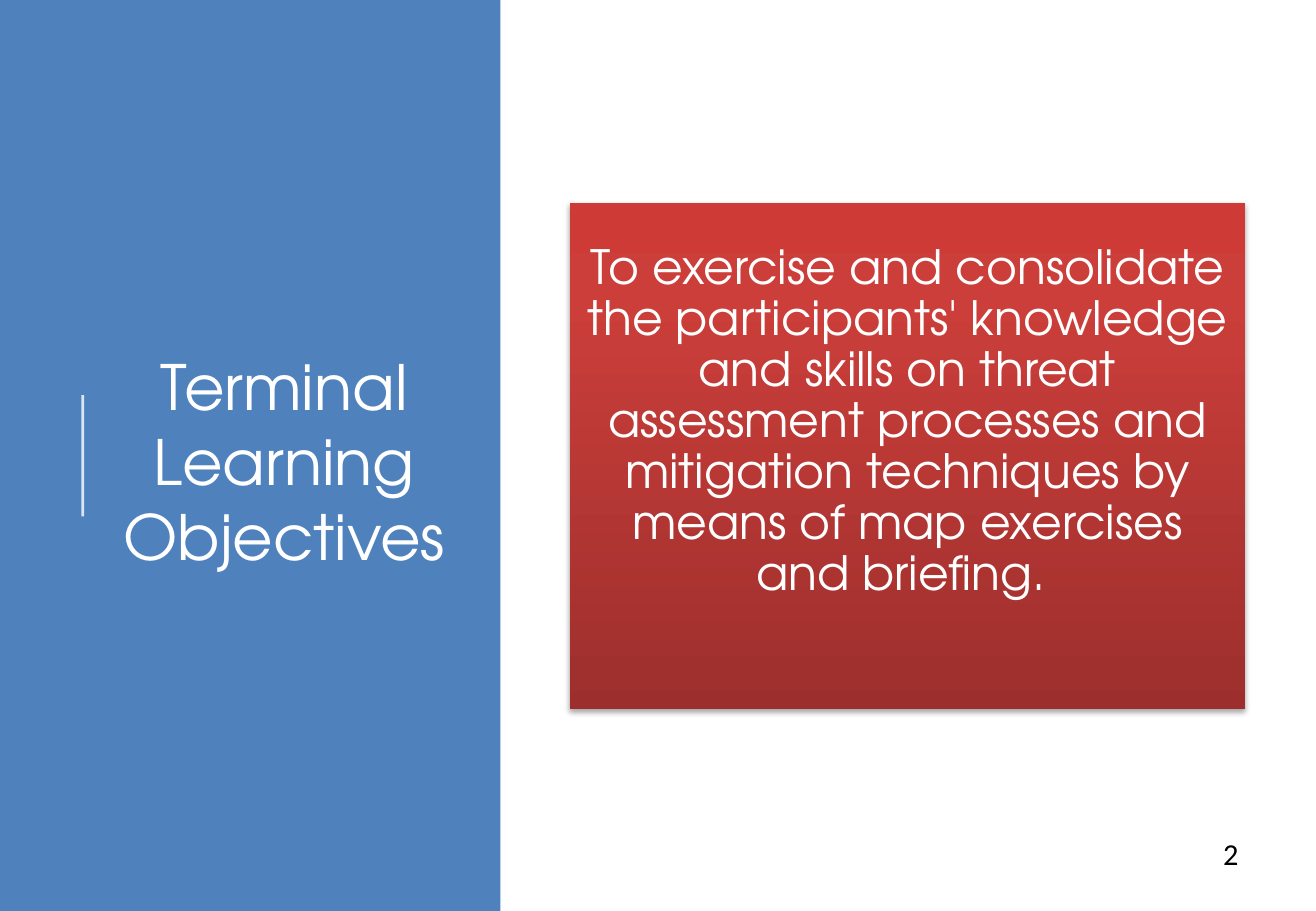
from copy import deepcopy
from dataclasses import dataclass

from lxml import etree
from pptx import Presentation
from pptx import util as u
from pptx.dml.color import RGBColor
from pptx.enum import shapes, text
from pptx.oxml.ns import qn

COLORS = {
    "blue": "4F81BD",
    "white": "FFFFFF",
    "black": "000000",
    "dark_red": "9C2F2D",
    "red": "CB3E3A",
    "light_red": "CE3B37",
}
HEADING_FONT = "TeX Gyre Adventor"
OBJECTIVE = (
    "To exercise and consolidate the participants' knowledge and skills on threat "
    "assessment processes and mitigation techniques by means of map exercises and briefing. "
)


@dataclass(frozen=True)
class Area:
    left: float
    top: float
    width: float
    height: float

    def lengths(self) -> tuple:
        return tuple(u.Cm(v) for v in (self.left, self.top, self.width, self.height))


SIDEBAR = Area(0, 0, 10.46, 19.05)
HEADING = Area(2.13, 1.98, 7.62, 15.29)
OBJECTIVE_CARD = Area(11.91, 4.24, 14.12, 10.59)
PAGE_NUMBER = Area(19.71, 17.35, 6.43, 1.02)


def rgb(name: str) -> RGBColor:
    return RGBColor.from_string(COLORS[name])


def add_rectangle(slide, area: Area):
    rectangle = slide.shapes.add_shape(shapes.MSO_SHAPE.RECTANGLE, *area.lengths())
    rectangle.shadow.inherit = False
    rectangle.line.fill.background()
    return rectangle


def write(frame, words: str, *, size: float, font: str = HEADING_FONT, color: str = "white",
          align=text.PP_ALIGN.CENTER, anchor=text.MSO_ANCHOR.MIDDLE, spacing: float = 1.0) -> None:
    frame.word_wrap = True
    frame.auto_size = text.MSO_AUTO_SIZE.NONE
    frame.vertical_anchor = anchor
    paragraph = frame.paragraphs[0]
    paragraph.alignment = align
    paragraph.line_spacing = spacing
    run = paragraph.add_run()
    run.text = words
    run.font.size = u.Pt(size)
    run.font.name = font
    run.font.color.rgb = rgb(color)


def set_alpha(color_element, percent: int) -> None:
    etree.SubElement(color_element, qn("a:alpha"), val=str(percent * 1000))


def fill_red_gradient(card) -> None:
    card.fill.gradient()
    card.fill.gradient_angle = 90
    stop_list = card.element.find(".//" + qn("a:gsLst"))
    stop_list.append(deepcopy(stop_list[0]))
    levels = ((0, "dark_red"), (0.8, "red"), (1, "light_red"))
    for stop, (position, color) in zip(card.fill.gradient_stops, levels):
        stop.position = position
        stop.color.rgb = rgb(color)


def add_soft_shadow(card) -> None:
    effects = card.element.spPr.find(qn("a:effectLst"))
    shadow = etree.SubElement(
        effects, qn("a:outerShdw"), blurRad=str(u.Pt(3.1)), dist=str(u.Pt(1.8)),
        dir="5400000", rotWithShape="0",
    )
    set_alpha(etree.SubElement(shadow, qn("a:srgbClr"), val=COLORS["black"]), 35)


def add_accent(slide):
    accent = slide.shapes.add_connector(
        shapes.MSO_CONNECTOR.STRAIGHT, u.Cm(1.73), u.Cm(10.8), u.Cm(1.73), u.Cm(8.26)
    )
    accent.line.width = u.Pt(1.5)
    accent.line.color.rgb = rgb("white")
    set_alpha(accent.element.find(".//" + qn("a:srgbClr")), 80)
    etree.SubElement(accent.element.spPr, qn("a:effectLst"))
    return accent


def main() -> None:
    deck = Presentation()
    deck.slide_width, deck.slide_height = u.Cm(27.51), u.Cm(19.05)
    slide = deck.slides.add_slide(deck.slide_layouts[5])

    sidebar = add_rectangle(slide, SIDEBAR)
    sidebar.fill.solid()
    sidebar.fill.fore_color.rgb = rgb("blue")
    accent = add_accent(slide)

    heading = slide.shapes.title
    heading.left, heading.top, heading.width, heading.height = HEADING.lengths()
    write(heading.text_frame, "Terminal Learning Objectives", size=37)
    for backdrop in (sidebar, accent):
        heading.element.addprevious(backdrop.element)

    card = add_rectangle(slide, OBJECTIVE_CARD)
    fill_red_gradient(card)
    add_soft_shadow(card)
    objective = card.text_frame
    objective.margin_left = objective.margin_right = objective.margin_top = u.Cm(0.3)
    objective.margin_bottom = u.Cm(1.72)
    write(objective, OBJECTIVE, size=28, spacing=0.9)

    page_number = slide.shapes.add_textbox(*PAGE_NUMBER.lengths())
    write(page_number.text_frame, "2", size=18, font="Calibri", color="black",
          align=text.PP_ALIGN.RIGHT, anchor=text.MSO_ANCHOR.TOP)

    deck.save("out.pptx")


if __name__ == "__main__":
    main()
